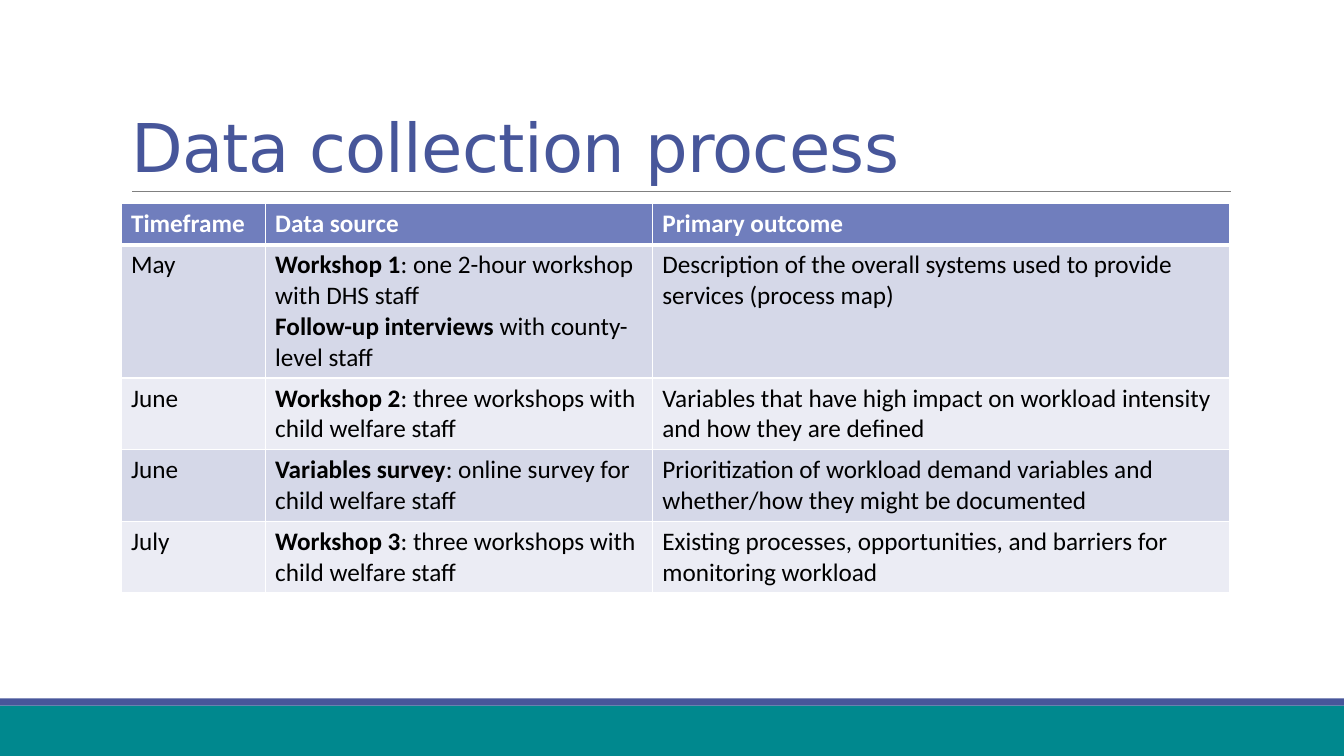
"""Build the data collection process slide with its schedule table."""
from lxml import etree
from pptx import Presentation
from pptx.dml.color import RGBColor
from pptx.enum import shapes, text
from pptx.oxml import ns
from pptx.util import Inches, Pt

TEAL = RGBColor(0x00, 0x88, 0x8E)
INDIGO = RGBColor(0x47, 0x56, 0x9A)
GREY = RGBColor(0x80, 0x80, 0x80)
HEADER = RGBColor(0x70, 0x7E, 0xBD)
BAND_DARK = RGBColor(0xD5, 0xD8, 0xE8)
BAND_LIGHT = RGBColor(0xEB, 0xEC, 0xF4)
WHITE = RGBColor(0xFF, 0xFF, 0xFF)
BLACK = RGBColor(0x00, 0x00, 0x00)

COLUMN_WIDTHS = [1.43, 3.84, 5.73]
ROW_HEIGHTS = [0.41, 1.31, 0.71, 0.71, 0.71]
HEADINGS = ["Timeframe", "Data source", "Primary outcome"]
STAGES = [
    ("May",
     [("Workshop 1", ": one 2-hour workshop with DHS staff"),
      ("Follow-up interviews ", "with county-level staff")],
     "Description of the overall systems used to provide services (process map)"),
    ("June",
     [("Workshop 2", ": three workshops with child welfare staff")],
     "Variables that have high impact on workload intensity and how they are defined"),
    ("June",
     [("Variables survey", ": online survey for child welfare staff")],
     "Prioritization of workload demand variables and whether/how they might be documented"),
    ("July",
     [("Workshop 3", ": three workshops with child welfare staff")],
     "Existing processes, opportunities, and barriers for monitoring workload"),
]


def add_run(paragraph, wording, size, font, color, bold=False):
    run = paragraph.add_run()
    run.text = wording
    run.font.size = Pt(size)
    run.font.name = font
    run.font.color.rgb = color
    run.font.bold = bold
    return run


def set_borders(cell, widths):
    properties = cell._tc.get_or_add_tcPr()
    for side, width in zip("LRTB", widths):
        line = etree.SubElement(properties, ns.qn(f"a:ln{side}"), w=str(Pt(width)))
        fill = etree.SubElement(line, ns.qn("a:solidFill"))
        etree.SubElement(fill, ns.qn("a:srgbClr"), val=str(WHITE))


presentation = Presentation()
presentation.slide_width = Inches(13.33)
presentation.slide_height = Inches(7.5)
slide = presentation.slides.add_slide(presentation.slide_layouts[5])

for top, height, color in [(7, 0.5, TEAL), (6.93, 0.07, INDIGO)]:
    band = slide.shapes.add_shape(
        shapes.MSO_SHAPE.RECTANGLE, 0, Inches(top), presentation.slide_width, Inches(height))
    band.shadow.inherit = False
    band.fill.solid()
    band.fill.fore_color.rgb = color
    band.line.fill.background()

rule = slide.shapes.add_connector(
    shapes.MSO_CONNECTOR.STRAIGHT, Inches(1.31), Inches(1.9), Inches(12.21), Inches(1.9))
rule.line.color.rgb = GREY
rule.line.width = Pt(0.5)
etree.SubElement(rule._element.spPr, ns.qn("a:effectLst"))

title = slide.shapes.title
title.left, title.top = Inches(1.2), Inches(0.31)
title.width, title.height = Inches(11), Inches(1.59)
title.text_frame.word_wrap = True
title.text_frame.auto_size = text.MSO_AUTO_SIZE.NONE
title.text_frame.vertical_anchor = text.MSO_ANCHOR.BOTTOM
heading = title.text_frame.paragraphs[0]
heading.alignment = text.PP_ALIGN.LEFT
heading.line_spacing = 0.85
title_run = add_run(heading, "Data collection process", 48, "DejaVu Sans", INDIGO)
title_run.font._element.set("spc", "-50")

table = slide.shapes.add_table(
    len(ROW_HEIGHTS), len(COLUMN_WIDTHS), Inches(1.2), Inches(2.02),
    Inches(sum(COLUMN_WIDTHS)), Inches(sum(ROW_HEIGHTS))).table
for column, width in zip(table.columns, COLUMN_WIDTHS):
    column.width = Inches(width)
for row, height in zip(table.rows, ROW_HEIGHTS):
    row.height = Inches(height)

rows = [[[(label, "")] for label in HEADINGS]]
rows += [[[("", month)], sources, [("", outcome)]] for month, sources, outcome in STAGES]
for row_index, contents in enumerate(rows):
    is_header = row_index == 0
    fill_color = HEADER if is_header else (BAND_LIGHT, BAND_DARK)[row_index % 2]
    top_width = 3 if row_index == 1 else 1
    bottom_width = 3 if is_header else 1
    for column_index, entries in enumerate(contents):
        cell = table.cell(row_index, column_index)
        set_borders(cell, (1, 1, top_width, bottom_width))
        cell.fill.solid()
        cell.fill.fore_color.rgb = fill_color
        for entry_index, (strong, plain) in enumerate(entries):
            frame = cell.text_frame
            paragraph = frame.add_paragraph() if entry_index else frame.paragraphs[0]
            for wording, bold in [(strong, True), (plain, False)]:
                if wording:
                    add_run(paragraph, wording, 18, "Calibri", WHITE if is_header else BLACK, bold)

presentation.save("out.pptx")
